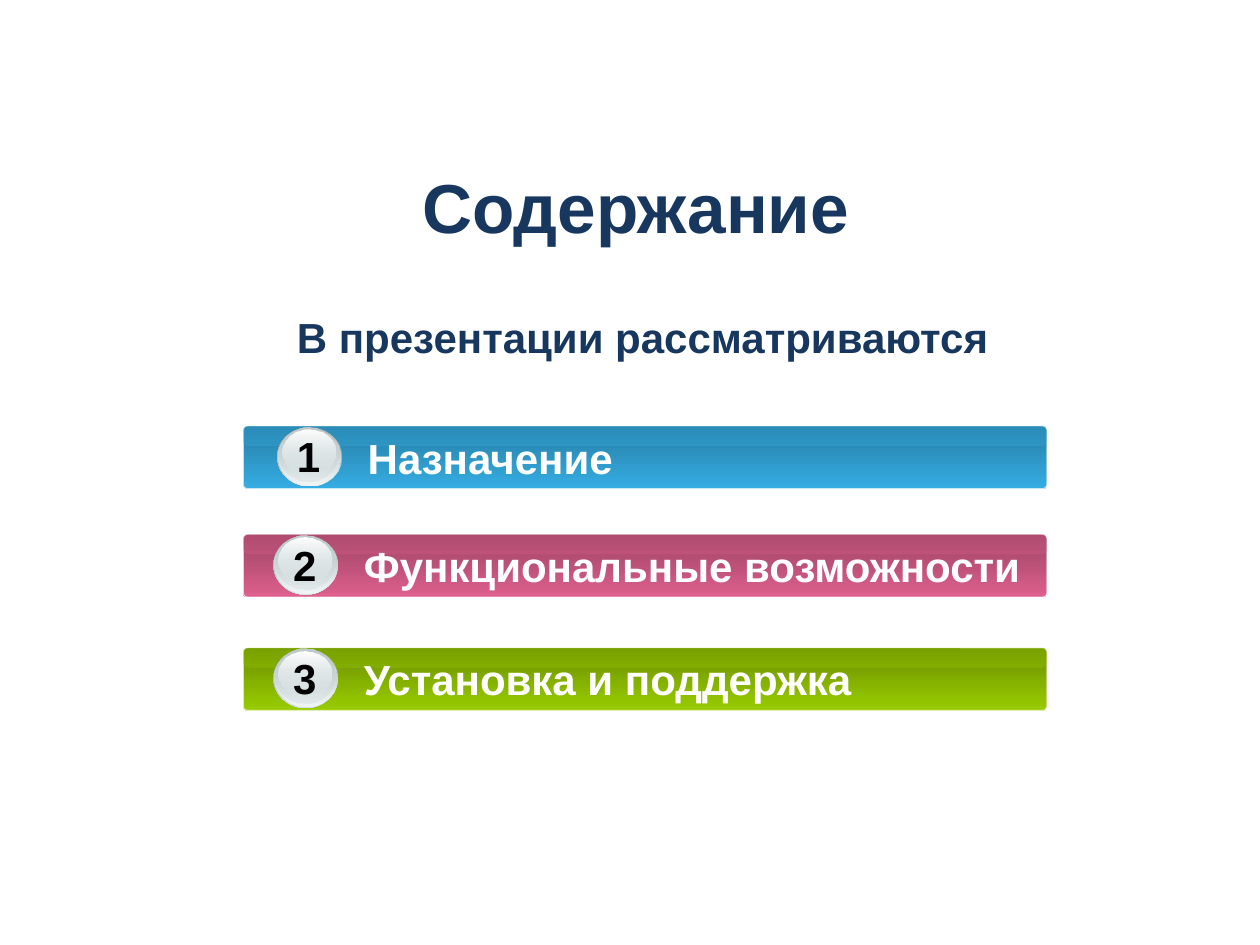
from pptx import Presentation
from pptx.dml.color import RGBColor
from pptx.enum.shapes import MSO_SHAPE as Shape
from pptx.enum.text import MSO_ANCHOR as Anchor, PP_ALIGN as Align
from pptx.oxml.ns import qn
from pptx.util import Inches, Pt
from lxml.etree import SubElement

NAVY, WHITE, BLACK = "17375E", "FFFFFF", "000000"
TITLE = "Содержание"
INTRO = "В презентации рассматриваются"
# number, topic, bar top, badge left, dark colour, bright colour
TOPICS = [
    ("1", "Назначение", 3.38, 2.2, "267DA4", "35ADE3"),
    ("2", "Функциональные возможности", 4.24, 2.17, "9C4363", "DE608D"),
    ("3", "Установка и поддержка", 5.14, 2.17, "6B8F00", "99CC00"),
]
BAR_LEFT, BAR_WIDTH, BAR_HEIGHT, GLOSS_HEIGHT = 1.93, 6.38, 0.5, 0.16
# offset from badge left and bar top, size, (colour, opacity %) from top to bottom
BADGE_LAYERS = [
    (0, 0.01, 0.51, 0.47, [("99A1A2", 100), ("D6E1E2", 100)]),
    (0.01, 0.01, 0.5, 0.46, [("D6E1E2", 0), ("F2F5F5", 100)]),
    (0.01, 0.01, 0.48, 0.43, [("C1CBCC", 100), ("D6E1E2", 48)]),
    (0.04, 0.03, 0.42, 0.35, [("FFFFFF", 100), ("D6E1E2", 38)]),
]


def rgb(value):
    return RGBColor.from_string(value)


def set_opacity(parent, percents):
    """Apply one opacity to each colour found below the XML element, in order."""
    for color, percent in zip(parent.iter(qn("a:srgbClr")), percents):
        if percent < 100:
            SubElement(color, qn("a:alpha")).set("val", str(percent * 1000))


def add_filled(shapes, kind, box, colors, corner=None):
    """Add a borderless shape with a solid fill or a top-to-bottom gradient."""
    shape = shapes.add_shape(kind, *map(Inches, box))
    shape.shadow.inherit = False
    if corner is not None:
        shape.adjustments[0] = corner
    if len(colors) == 1:
        shape.fill.solid()
        shape.fill.fore_color.rgb = rgb(colors[0][0])
    else:
        shape.fill.gradient()
        shape.fill.gradient_angle = 270
        for stop, position, (color, _) in zip(shape.fill.gradient_stops, (0, 1), colors):
            stop.position = position
            stop.color.rgb = rgb(color)
    set_opacity(shape.fill._xPr, [percent for _, percent in colors])
    shape.line.fill.background()
    return shape


def add_text(shapes, box, text, size, color, align=Align.CENTER, anchor=Anchor.TOP):
    frame = shapes.add_textbox(*map(Inches, box)).text_frame
    frame.word_wrap = True
    frame.vertical_anchor = anchor
    paragraph = frame.paragraphs[0]
    paragraph.alignment = align
    run = paragraph.add_run()
    run.text = text
    run.font.name = "Arial"
    run.font.size = Pt(size)
    run.font.bold = True
    run.font.color.rgb = rgb(color)


def add_topic(shapes, number, topic, top, badge_left, dark, bright):
    row = shapes.add_group_shape().shapes
    bar = add_filled(row, Shape.ROUNDED_RECTANGLE, (BAR_LEFT, top, BAR_WIDTH, BAR_HEIGHT),
                     [(dark, 100), (bright, 100)], 0.07)
    bar.line.color.rgb = rgb(WHITE)
    bar.line.width = Pt(0.75)
    set_opacity(bar.line._ln, [70])
    add_filled(row, Shape.ROUNDED_RECTANGLE, (BAR_LEFT, top, BAR_WIDTH, GLOSS_HEIGHT),
               [(bright, 30)], 0.26)
    add_text(row, (badge_left + 0.62, top, 5.5, BAR_HEIGHT), topic, 24, WHITE, Align.LEFT)
    for dx, dy, width, height, colors in BADGE_LAYERS:
        add_filled(row, Shape.OVAL, (badge_left + dx, top + dy, width, height), colors)
    add_text(row, (badge_left + 0.01, top - 0.01, 0.48, BAR_HEIGHT), number, 24, BLACK)


def main():
    deck = Presentation()
    deck.slide_width, deck.slide_height = Inches(10), Inches(7.5)
    shapes = deck.slides.add_slide(deck.slide_layouts[6]).shapes
    add_text(shapes, (0.45, 1.26, 9.19, 0.74), TITLE, 39.6, NAVY, anchor=Anchor.MIDDLE)
    add_text(shapes, (1.89, 2.42, 6.42, 0.5), INTRO, 24, NAVY)
    for topic in TOPICS:
        add_topic(shapes, *topic)
    deck.save("out.pptx")


if __name__ == "__main__":
    main()
